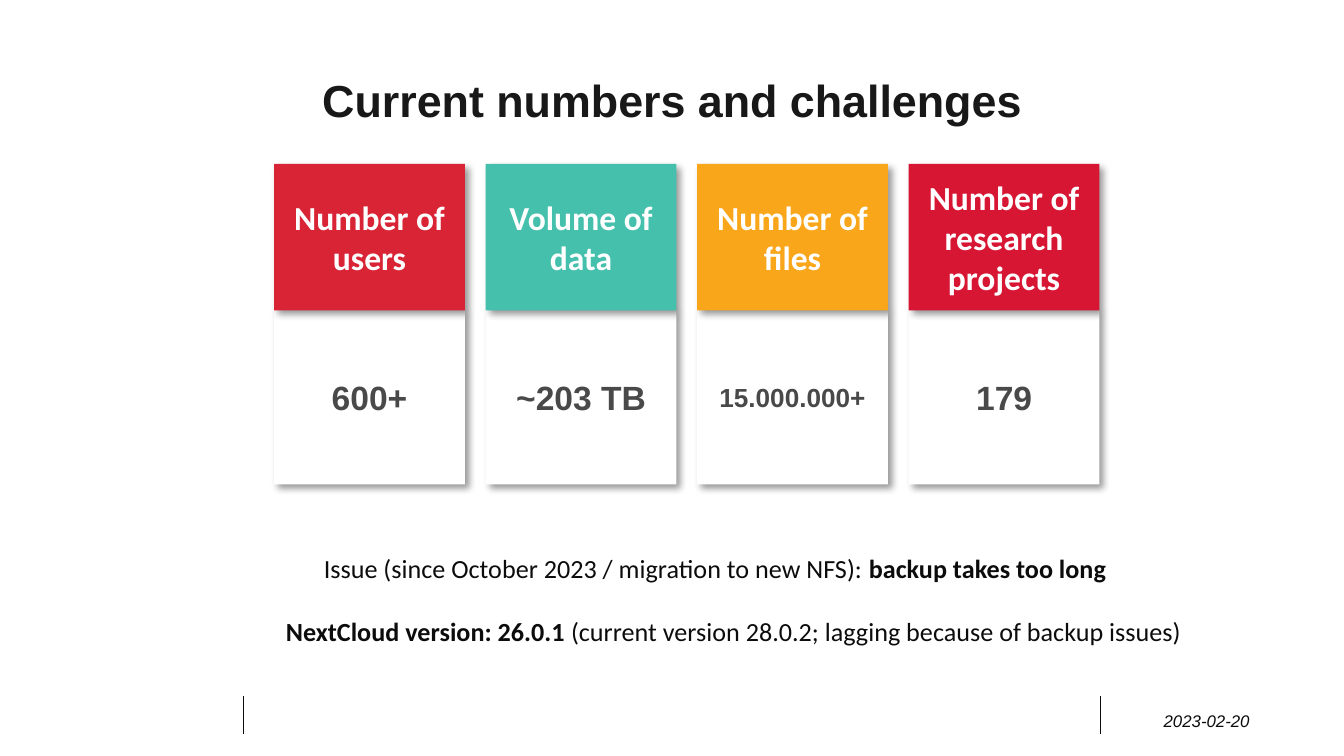
import pptx
import pptx.util
import pptx.dml.color
import pptx.enum.shapes
import pptx.enum.text
import pptx.oxml
import pptx.oxml.ns

Cm = pptx.util.Cm
Pt = pptx.util.Pt
RGBColor = pptx.dml.color.RGBColor
ALIGN = pptx.enum.text.PP_ALIGN
ANCHOR = pptx.enum.text.MSO_ANCHOR

INK = RGBColor(0x0C, 0x0C, 0x0C)
DARK = RGBColor(0x18, 0x18, 0x18)
GREY = RGBColor(0x49, 0x49, 0x49)
WHITE = RGBColor(0xFF, 0xFF, 0xFF)
RED = RGBColor(0xD9, 0x24, 0x35)
TEAL = RGBColor(0x45, 0xC0, 0xAC)
AMBER = RGBColor(0xF9, 0xA6, 0x1A)
CRIMSON = RGBColor(0xD7, 0x16, 0x34)

CARDS = [
    ("Number of users", "600+", 18, RED),
    ("Volume of data", "~203 TB", 18, TEAL),
    ("Number of files", "15.000.000+", 14, AMBER),
    ("Number of research projects", "179", 18, CRIMSON),
]
SHADOW = (
    '<a:outerShdw {} blurRad="50800" dist="38100" dir="2700000" algn="tl" rotWithShape="0">'
    '<a:srgbClr val="000000"><a:alpha val="40000"/></a:srgbClr></a:outerShdw>'
).format(pptx.oxml.ns.nsdecls("a"))


def style(run, face, size, color, bold=False, italic=False):
    font = run.font
    font.name, font.size, font.color.rgb = face, Pt(size), color
    font.bold, font.italic = bold, italic


def add_text(slide, box, parts, face, size, color, align=ALIGN.CENTER,
             anchor=ANCHOR.MIDDLE, italic=False):
    """Add one paragraph; parts holds (text, bold) pairs."""
    frame = slide.shapes.add_textbox(*map(Cm, box)).text_frame
    frame.word_wrap = True
    frame.vertical_anchor = anchor
    para = frame.paragraphs[0]
    para.alignment = align
    for text, bold in parts:
        run = para.add_run()
        run.text = text
        style(run, face, size, color, bold, italic)
    return para


def add_tile(slide, box, text, fill, face, size, color):
    tile = slide.shapes.add_shape(pptx.enum.shapes.MSO_SHAPE.RECTANGLE, *map(Cm, box))
    tile.fill.solid()
    tile.fill.fore_color.rgb = fill
    tile.line.fill.background()
    tile.shadow.inherit = False
    effects = tile._element.spPr.find(pptx.oxml.ns.qn("a:effectLst"))
    effects.append(pptx.oxml.parse_xml(SHADOW))
    frame = tile.text_frame
    frame.word_wrap = True
    frame.vertical_anchor = ANCHOR.MIDDLE
    frame.text = text
    para = frame.paragraphs[0]
    para.alignment = ALIGN.CENTER
    style(para.runs[0], face, size, color, bold=True)


def add_cards(slide, left, top, width, height):
    gap = 0.39
    head = 2.77
    wide = (width - gap * (len(CARDS) - 1)) / len(CARDS)
    for i, (label, value, size, fill) in enumerate(CARDS):
        x = left + i * (wide + gap)
        add_tile(slide, (x, top + head, wide, height - head), value, WHITE, "Arial", size, GREY)
        add_tile(slide, (x, top, wide, head), label, fill, "Calibri", 18, WHITE)


def add_notes(slide, left, top, width, height):
    """Place the two remarks below the cards."""
    issue = [("Issue (since October 2023 / migration to new NFS): ", False),
             ("backup takes too long", True)]
    version = [("NextCloud version: 26.0.1 ", True),
               ("(current version 28.0.2; lagging because of backup issues)", False)]
    inset = 1.78
    add_text(slide, (left + inset, top, width - inset, 0.86), issue,
             "Calibri", 14, INK, ALIGN.LEFT, ANCHOR.TOP)
    add_text(slide, (left, top + 1.19, width, height - 1.19), version,
             "Calibri", 14, INK, anchor=ANCHOR.TOP)


def add_footer(slide, left, top, width, height):
    """Draw a rule at each end of the box and the date past the right one."""
    for x in (left, left + width):
        rule = slide.shapes.add_connector(
            pptx.enum.shapes.MSO_CONNECTOR.STRAIGHT, Cm(x), Cm(top), Cm(x), Cm(top + height))
        rule.line.color.rgb = INK
        rule.line.width = Pt(0.5)
        pptx.oxml.ns.qn("a:effectLst")
        rule._element.spPr.append(
            pptx.oxml.parse_xml("<a:effectLst {}/>".format(pptx.oxml.ns.nsdecls("a"))))
    add_text(slide, (left + width + 0.2, top + 0.08, 3.61, 0.76), [("2023-02-20", False)],
             "Arial", 9, INK, italic=True)


def main():
    deck = pptx.Presentation()
    deck.slide_width, deck.slide_height = Cm(25.4), Cm(14.29)
    slide = deck.slides.add_slide(deck.slide_layouts[6])
    add_footer(slide, 4.6, 13.16, 16.2, 0.71)
    title = add_text(slide, (1.75, 0.56, 21.9, 2.77),
                     [("Current numbers and challenges", True)], "Arial", 24, DARK)
    title.line_spacing = 0.9
    add_cards(slide, 5.18, 3.1, 15.6, 6.06)
    add_notes(slide, 4.09, 10.31, 19.56, 2.62)
    deck.save("out.pptx")


if __name__ == "__main__":
    main()
